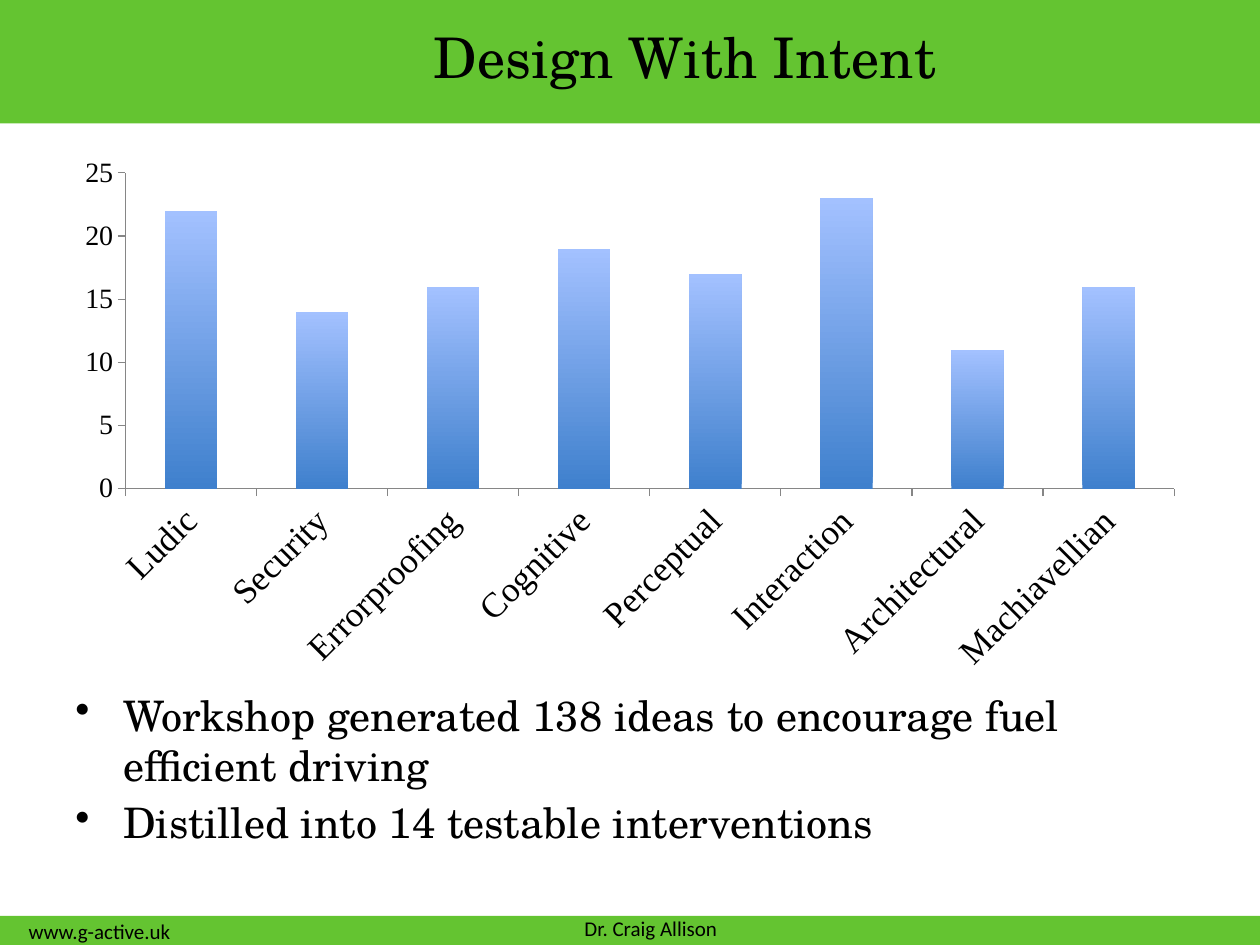
from lxml import etree
from pptx import Presentation
from pptx.chart.data import CategoryChartData
from pptx.dml.color import RGBColor
from pptx.enum.chart import XL_CHART_TYPE, XL_TICK_MARK
from pptx.enum.shapes import MSO_SHAPE
from pptx.enum.text import MSO_ANCHOR, PP_ALIGN
from pptx.oxml.ns import qn
from pptx.util import Inches, Pt

GREEN = RGBColor(0x64, 0xC4, 0x31)
BLACK = RGBColor(0, 0, 0)
AXIS_GREY = RGBColor(0x86, 0x86, 0x86)
BAR_BOTTOM = RGBColor(0x3F, 0x80, 0xCD)
BAR_TOP = RGBColor(0xA3, 0xC1, 0xFF)
SERIF, SANS, CHART_FONT = "TeX Gyre Schola", "Calibri", "Times New Roman"

IDEAS = {
    "Ludic": 22, "Security": 14, "Errorproofing": 16, "Cognitive": 19,
    "Perceptual": 17, "Interaction": 23, "Architectural": 11, "Machiavellian": 16,
}
FINDINGS = [
    "Workshop generated 138 ideas to encourage fuel efficient driving",
    "Distilled into 14 testable interventions",
]


def write(paragraph, text, font=SERIF, size=24, align=PP_ALIGN.LEFT,
          bullet=None, indent=0.38, before=0):
    """Fill one paragraph with formatted text."""
    if bullet:
        properties = paragraph._p.get_or_add_pPr()
        properties.set("marL", str(Inches(indent)))
        properties.set("indent", str(-Inches(indent)))
        etree.SubElement(properties, qn("a:buChar")).set("char", bullet)
    paragraph.alignment = align
    paragraph.space_before = Pt(before)
    run = paragraph.add_run()
    run.text = text
    run.font.name, run.font.size = font, Pt(size)
    run.font.color.rgb = BLACK


class SlideBuilder:
    def __init__(self, slide):
        self.slide = slide

    def band(self, top, height):
        band = self.slide.shapes.add_shape(
            MSO_SHAPE.RECTANGLE, 0, Inches(top), Inches(10), Inches(height))
        band.shadow.inherit = False
        band.fill.solid()
        band.fill.fore_color.rgb = GREEN
        band.line.fill.background()

    def text(self, box, lines, inset=True, anchor=MSO_ANCHOR.TOP, gap=0, **style):
        frame = self.slide.shapes.add_textbox(*map(Inches, box)).text_frame
        frame.word_wrap = True
        frame.vertical_anchor = anchor
        if not inset:
            frame.margin_left = frame.margin_right = 0
            frame.margin_top = frame.margin_bottom = 0
        for number, line in enumerate(lines):
            paragraph = frame.add_paragraph() if number else frame.paragraphs[0]
            write(paragraph, line, before=gap if number else 0, **style)

    def column_chart(self, box, values, plot_area):
        data = CategoryChartData()
        data.categories = list(values)
        data.add_series("Series 1", list(values.values()))
        chart = self.slide.shapes.add_chart(
            XL_CHART_TYPE.COLUMN_CLUSTERED, *map(Inches, box), data).chart
        chart.has_legend = chart.has_title = False
        chart.font.name, chart.font.size = CHART_FONT, Pt(9)
        chart.font.color.rgb = BLACK

        # Columns shaded from dark at the foot to light at the top
        plot = chart.plots[0]
        plot.gap_width = 150
        plot.vary_by_categories = False
        fill = plot.series[0].format.fill
        fill.gradient()
        fill.gradient_angle = 90
        for stop, colour in zip(fill.gradient_stops, (BAR_BOTTOM, BAR_TOP)):
            stop.color.rgb = colour

        # Axes
        for axis, size in ((chart.category_axis, 20), (chart.value_axis, 16)):
            axis.has_major_gridlines = False
            axis.major_tick_mark = XL_TICK_MARK.OUTSIDE
            axis.minor_tick_mark = XL_TICK_MARK.NONE
            axis.format.line.color.rgb = AXIS_GREY
            axis.format.line.width = Pt(0.75)
            labels = axis.tick_labels.font
            labels.name, labels.size = CHART_FONT, Pt(size)
            labels.color.rgb = BLACK
        chart.value_axis.minimum_scale = 0
        chart.value_axis.maximum_scale = 25
        chart.value_axis.major_unit = 5
        label_body = chart.category_axis._element.find(
            f"{qn('c:txPr')}/{qn('a:bodyPr')}")
        label_body.set("rot", str(-45 * 60000))
        label_body.set("vert", "horz")

        # Fixed inner plot area, as fractions of the chart
        area = chart._chartSpace.chart.plotArea
        for old in area.findall(qn("c:layout")):
            area.remove(old)
        layout = etree.Element(qn("c:layout"))
        area.insert(0, layout)
        manual = etree.SubElement(layout, qn("c:manualLayout"))
        settings = [("layoutTarget", "inner"), ("xMode", "edge"), ("yMode", "edge")]
        for tag, value in settings + list(zip("xywh", plot_area)):
            etree.SubElement(manual, qn(f"c:{tag}")).set("val", str(value))


def main():
    deck = Presentation()
    deck.slide_width, deck.slide_height = Inches(10), Inches(7.5)
    page = SlideBuilder(deck.slides.add_slide(deck.slide_layouts[6]))

    # Header and footer
    page.band(0, 0.98)
    page.band(7.27, 0.23)
    footer = dict(inset=False, font=SANS, size=12, align=PP_ALIGN.CENTER)
    page.text((0, 7.29, 1.58, 0.2), ["www.g-active.uk"],
              anchor=MSO_ANCHOR.MIDDLE, **footer)
    page.text((3.42, 7.27, 3.49, 0.2), ["Dr. Craig Allison"], **footer)

    # Title and findings
    page.text((1, 0.13, 9, 0.79), ["Design With Intent "],
              size=32, align=PP_ALIGN.CENTER)
    page.text((0.5, 5.42, 9, 1.6), FINDINGS, bullet="•", gap=4)

    # Ideas per design lens
    page.column_chart((0.5, 1.16, 9, 4.25), IDEAS, (0.055, 0.05, 0.925, 0.59))

    deck.save("out.pptx")


if __name__ == "__main__":
    main()
